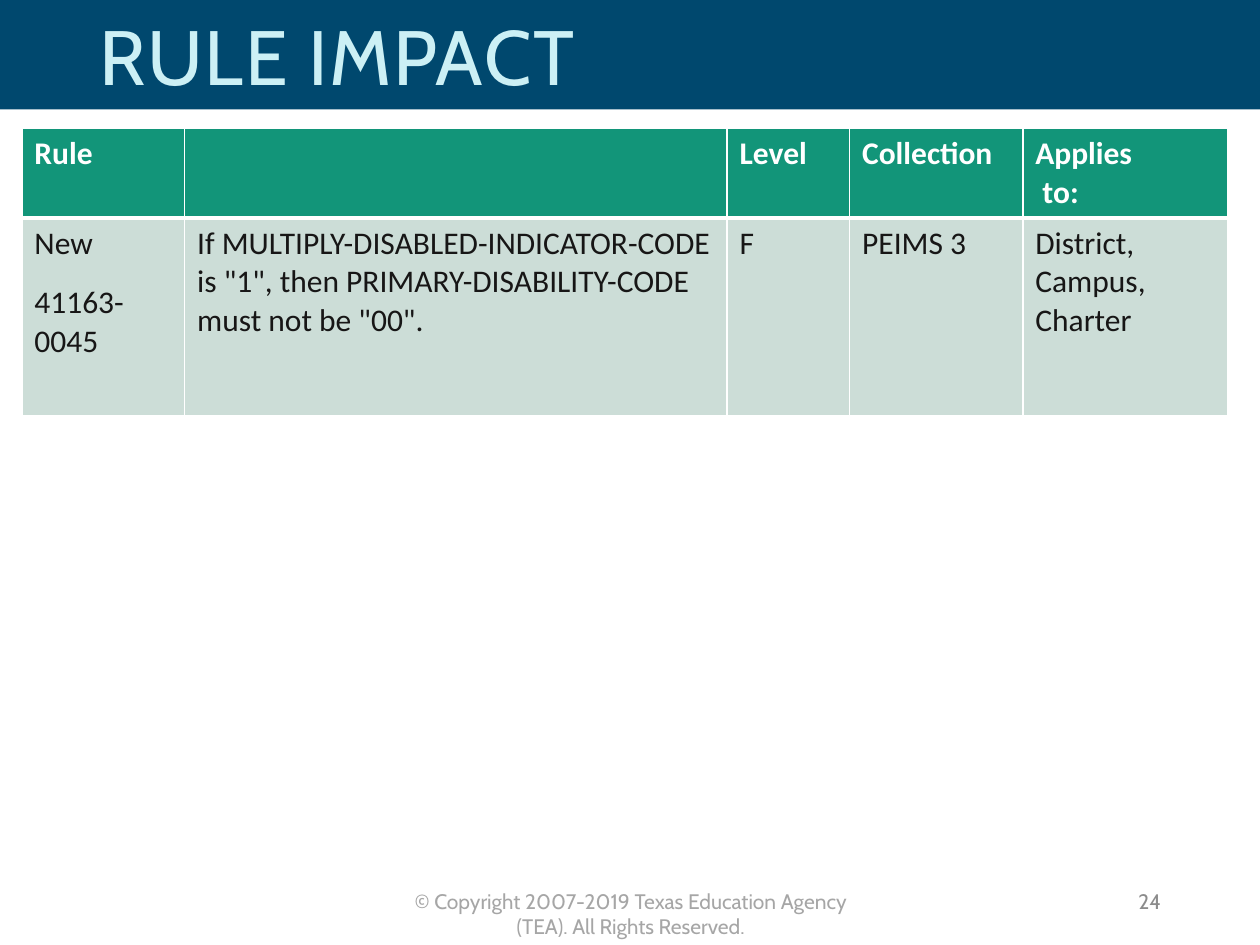
from dataclasses import dataclass

from lxml.etree import SubElement
from pptx import Presentation
from pptx.dml.color import RGBColor
from pptx.enum.shapes import MSO_SHAPE
from pptx.enum.text import MSO_ANCHOR, MSO_AUTO_SIZE, PP_ALIGN
from pptx.oxml.ns import qn
from pptx.util import Pt


@dataclass(frozen=True)
class Theme:
    head_font: str = "Cabin"
    body_font: str = "Calibri"
    title_size: int = 44
    table_size: int = 18
    small_size: int = 12
    band: str = "00486E"
    title: str = "CCF0F5"
    header: str = "129579"
    row: str = "CCDDD7"
    ink: str = "171616"
    white: str = "FFFFFF"
    footer: str = "A6A6A6"
    number: str = "8C8C8C"


T = Theme()
SLIDE_W, SLIDE_H = 720, 540
TITLE = "RULE IMPACT"
FOOTER = "© Copyright 2007-2019 Texas Education Agency (TEA). All Rights Reserved."
PAGE = "24"
HEADER = [["Rule"], [], ["Level"], ["Collection"], ["Applies", " to:"]]
RULE = [
    ["New", "41163-0045"],
    ['If MULTIPLY-DISABLED-INDICATOR-CODE is "1", then '
     'PRIMARY-DISABILITY-CODE must not be "00".'],
    ["F"],
    ["PEIMS 3"],
    ["District, Campus,", "Charter"],
]
SPACED_COLUMN = 0
COLUMNS = [93, 310, 70, 99, 117]
ROWS = [50, 113]


def add_run(p, text, size, color, font=T.head_font, bold=False):
    r = p.add_run()
    r.text = text
    r.font.size, r.font.name, r.font.bold = Pt(size), font, bold
    r.font.color.rgb = RGBColor.from_string(color)
    return r


def add_band(s):
    sp = s.shapes.add_shape(MSO_SHAPE.RECTANGLE, 0, 0, Pt(SLIDE_W), Pt(62.5))
    sp.shadow.inherit = False
    sp.fill.solid()
    sp.fill.fore_color.rgb = RGBColor.from_string(T.band)
    sp.line.fill.background()
    s.shapes._spTree.insert(2, sp._element)


def add_title(s):
    sp = s.shapes.title
    sp.left, sp.top, sp.width, sp.height = Pt(49.5), Pt(3.5), Pt(576), Pt(62.5)
    tf = sp.text_frame
    tf.auto_size = MSO_AUTO_SIZE.NONE
    tf.vertical_anchor = MSO_ANCHOR.MIDDLE
    p = tf.paragraphs[0]
    p.alignment, p.line_spacing = PP_ALIGN.LEFT, 0.9
    r = add_run(p, TITLE, T.title_size, T.title)
    r.font._element.set("spc", "100")


def add_note(s, text, box, color, align, anchor):
    sp = s.shapes.add_textbox(*(Pt(v) for v in box))
    tf = sp.text_frame
    tf.word_wrap = True
    tf.vertical_anchor = anchor
    p = tf.paragraphs[0]
    p.alignment = align
    add_run(p, text, T.small_size, color)


def set_borders(cell, bottom):
    tcPr = cell._tc.get_or_add_tcPr()
    for side in "LRTB":
        width = bottom if side == "B" else 1
        ln = SubElement(tcPr, qn(f"a:ln{side}"), w=str(Pt(width)))
        fill = SubElement(ln, qn("a:solidFill"))
        SubElement(fill, qn("a:srgbClr"), val=T.white)


def fill_cell(cell, lines, is_header, gap):
    set_borders(cell, 3 if is_header else 1)
    cell.fill.solid()
    cell.fill.fore_color.rgb = RGBColor.from_string(T.header if is_header else T.row)
    tf = cell.text_frame
    for i, line in enumerate(lines):
        p = tf.paragraphs[0] if i == 0 else tf.add_paragraph()
        if i:
            p.space_before = Pt(gap)
        add_run(p, line, T.table_size, T.white if is_header else T.ink,
                T.body_font, is_header)


def add_rules(s):
    rows = [HEADER, RULE]
    frame = s.shapes.add_table(len(rows), len(COLUMNS), Pt(12.5), Pt(73.5),
                               Pt(sum(COLUMNS)), Pt(sum(ROWS)))
    table = frame.table
    for column, width in zip(table.columns, COLUMNS):
        column.width = Pt(width)
    for i, (row, height) in enumerate(zip(rows, ROWS)):
        table.rows[i].height = Pt(height)
        for j, lines in enumerate(row):
            gap = 12 if i and j == SPACED_COLUMN else 0
            fill_cell(table.cell(i, j), lines, i == 0, gap)


def main():
    prs = Presentation()
    prs.slide_width, prs.slide_height = Pt(SLIDE_W), Pt(SLIDE_H)
    s = prs.slides.add_slide(prs.slide_layouts[5])
    add_band(s)
    add_title(s)
    add_rules(s)
    add_note(s, FOOTER, (219, 504, 283, 36), T.footer, PP_ALIGN.CENTER, MSO_ANCHOR.TOP)
    add_note(s, PAGE, (508.5, 500.5, 162, 29), T.number, PP_ALIGN.RIGHT, MSO_ANCHOR.MIDDLE)
    prs.save("out.pptx")


if __name__ == "__main__":
    main()
